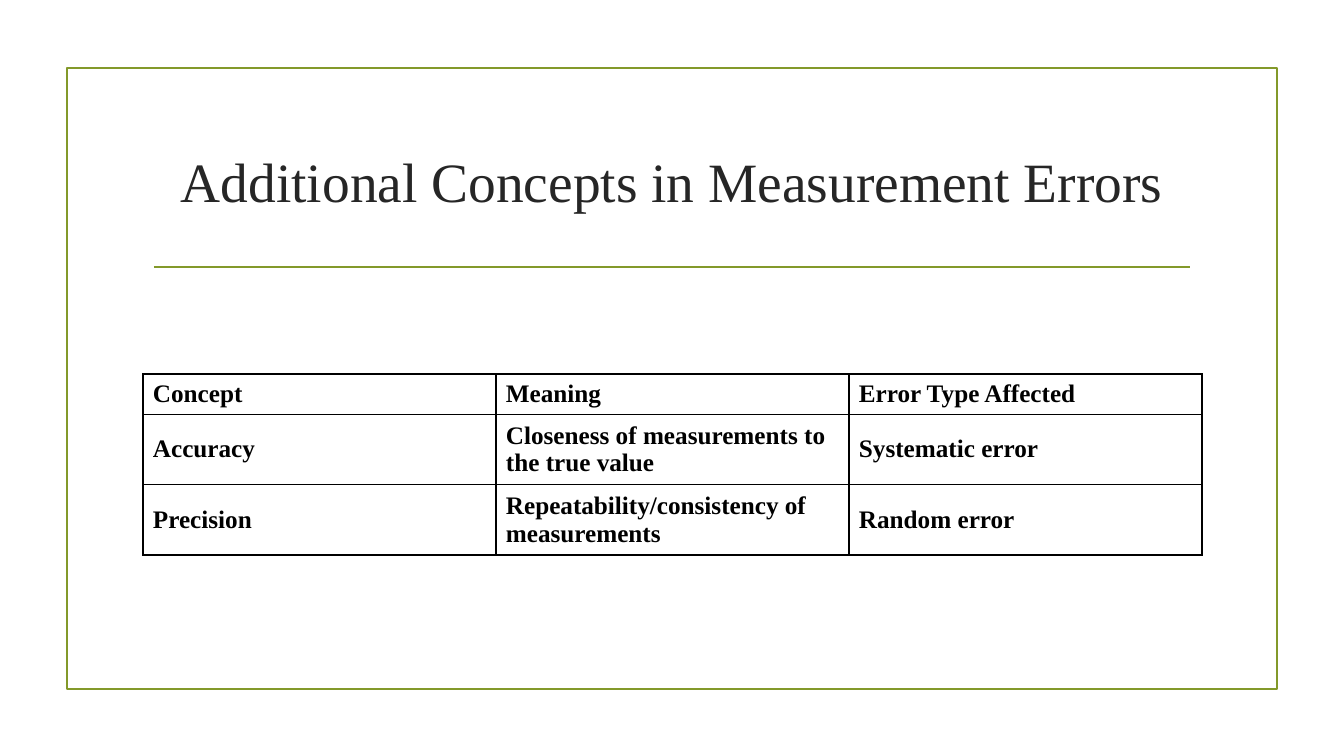
import pptx
import pptx.util
import pptx.dml.color
import pptx.enum.shapes
import pptx.enum.text
import pptx.oxml.ns
import lxml.etree
from dataclasses import dataclass


@dataclass(frozen=True)
class Theme:
    face: str = "Times New Roman"
    green: str = "83992A"
    ink: str = "262626"
    black: str = "000000"
    head: float = 39.6
    body: float = 18
    rule: float = 1.25
    edge: float = 1


THEME = Theme()
SCALE = 914400 / 100.8
ROWS = [
    ["Concept", "Meaning", "Error Type Affected"],
    ["Accuracy", "Closeness of measurements to the true value", "Systematic error"],
    ["Precision", "Repeatability/consistency of measurements", "Random error"],
]


def px(*sizes):
    return [pptx.util.Emu(round(size * SCALE)) for size in sizes]


def tint(code):
    return pptx.dml.color.RGBColor.from_string(code)


def style(item, form):
    for name, value in form.items():
        setattr(item, name, value)


def stroke(line):
    line.color.rgb = tint(THEME.green)
    line.width = pptx.util.Pt(THEME.rule)


def write(frame, text, size, color, bold, align):
    para = frame.paragraphs[0]
    para.alignment = align
    run = para.add_run()
    run.text = text
    style(run.font, {"name": THEME.face, "size": pptx.util.Pt(size), "bold": bold})
    run.font.color.rgb = tint(color)


def border(cell):
    props = cell._tc.get_or_add_tcPr()
    for side in ("lnL", "lnR", "lnT", "lnB"):
        line = lxml.etree.SubElement(props, pptx.oxml.ns.qn("a:" + side),
                                     w=str(pptx.util.Pt(THEME.edge)))
        fill = lxml.etree.SubElement(line, pptx.oxml.ns.qn("a:solidFill"))
        lxml.etree.SubElement(fill, pptx.oxml.ns.qn("a:srgbClr"), val=THEME.black)


def draw_frame(slide, box):
    left, top, width, height = box
    # Outer border
    rect = slide.shapes.add_shape(pptx.enum.shapes.MSO_SHAPE.RECTANGLE, *px(*box))
    rect.shadow.inherit = False
    rect.fill.background()
    stroke(rect.line)
    # Rule under the title
    inset, drop = 87, 199
    rule = slide.shapes.add_connector(
        pptx.enum.shapes.MSO_CONNECTOR.STRAIGHT,
        *px(left + inset, top + drop, left + width - inset, top + drop))
    stroke(rule.line)
    lxml.etree.SubElement(rule._element.spPr, pptx.oxml.ns.qn("a:effectLst"))


def draw_title(slide, box):
    frame = slide.shapes.add_textbox(*px(*box)).text_frame
    style(frame, {"word_wrap": True,
                  "vertical_anchor": pptx.enum.text.MSO_ANCHOR.MIDDLE})
    write(frame, "Additional Concepts in Measurement Errors", THEME.head,
          THEME.ink, False, pptx.enum.text.PP_ALIGN.CENTER)


def draw_table(slide, box):
    table = slide.shapes.add_table(len(ROWS), len(ROWS[0]), *px(*box)).table
    style(table, {"first_row": False, "horz_banding": False})
    # One-line header, two-line body rows
    for row, high in zip(table.rows, px(38, 66, 66)):
        row.height = high
    side, edge = px(10, 5)
    form = {"margin_left": side, "margin_right": side, "margin_top": edge,
            "margin_bottom": edge,
            "vertical_anchor": pptx.enum.text.MSO_ANCHOR.MIDDLE}
    for cell, text in zip(table.iter_cells(), sum(ROWS, [])):
        style(cell, form)
        border(cell)
        cell.fill.background()
        write(cell.text_frame, text, THEME.body, THEME.black, True,
              pptx.enum.text.PP_ALIGN.LEFT)


def main():
    deck = pptx.Presentation()
    deck.slide_width, deck.slide_height = px(1344, 756)
    slide = deck.slides.add_slide(deck.slide_layouts[6])
    draw_frame(slide, (67, 68, 1210, 621))
    draw_title(slide, (143, 108, 1058, 144))
    draw_table(slide, (143, 374, 1059, 170))
    deck.save("out.pptx")


if __name__ == "__main__":
    main()
